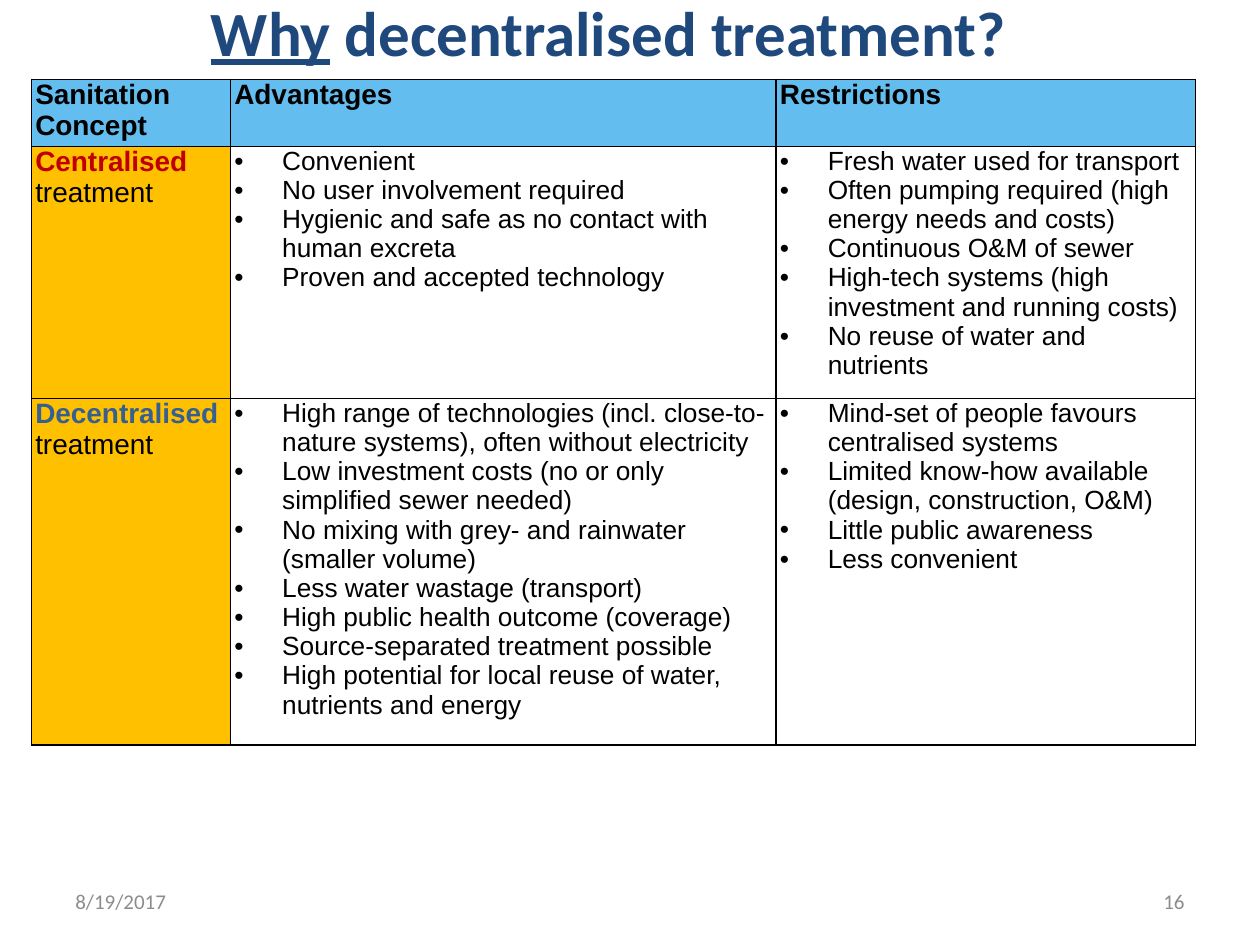
from pptx import Presentation
from pptx.dml.color import RGBColor
from pptx.enum.text import MSO_ANCHOR, PP_ALIGN
from pptx.oxml import parse_xml
from pptx.oxml.ns import nsdecls
from pptx.util import Inches, Pt

NAVY = RGBColor(0x1F, 0x49, 0x7D)
BLUE = RGBColor(0x37, 0x60, 0x92)
RED = RGBColor(0xC0, 0x00, 0x00)
BLACK = RGBColor(0x00, 0x00, 0x00)
GREY = RGBColor(0x8C, 0x8C, 0x8C)
SKY = RGBColor(0x63, 0xBE, 0xEF)
AMBER = RGBColor(0xFF, 0xC0, 0x00)

COLUMN_WIDTHS = (1.58, 4.33, 3.33)
ROW_HEIGHTS = (0.53, 2, 2.75)
BULLET_INDENT = Inches(0.38)

HEADINGS = ("Sanitation Concept", "Advantages", "Restrictions")
CONCEPTS = (
    ("Centralised ", RED,
     ("Convenient",
      "No user involvement required",
      "Hygienic and safe as no contact with human excreta",
      "Proven and accepted technology"),
     ("Fresh water used for transport",
      "Often pumping required (high energy needs and costs)",
      "Continuous O&M of sewer",
      "High-tech systems (high investment and running costs)",
      "No reuse of water and nutrients")),
    ("Decentralised ", BLUE,
     ("High range of technologies (incl. close-to-nature systems), often without electricity",
      "Low investment costs (no or only simplified sewer needed)",
      "No mixing with grey- and rainwater (smaller volume)",
      "Less water wastage (transport)",
      "High public health outcome (coverage)",
      "Source-separated treatment possible",
      "High potential for local reuse of water, nutrients and energy"),
     ("Mind-set of people favours centralised systems",
      "Limited know-how available (design, construction, O&M)",
      "Little public awareness",
      "Less convenient")),
)


def add_run(paragraph, text, font_name, size, color, bold=False):
    run = paragraph.add_run()
    run.text = text
    run.font.name = font_name
    run.font.size = Pt(size)
    run.font.color.rgb = color
    run.font.bold = bold
    return run


def add_title(slide):
    title = slide.shapes.title
    title.left, title.top = Inches(0.33), Inches(-0.17)
    title.width, title.height = Inches(9), Inches(0.83)
    title.text_frame.vertical_anchor = MSO_ANCHOR.MIDDLE
    paragraph = title.text_frame.paragraphs[0]
    paragraph.alignment = PP_ALIGN.CENTER
    add_run(paragraph, "Why", "Calibri", 36, NAVY, True).font.underline = True
    add_run(paragraph, " decentralised treatment?", "Calibri", 36, NAVY, True)


def add_footer(slide, left, text, alignment):
    box = slide.shapes.add_textbox(Inches(left), Inches(6.95), Inches(2.33), Inches(0.4))
    box.text_frame.word_wrap = True
    box.text_frame.vertical_anchor = MSO_ANCHOR.MIDDLE
    paragraph = box.text_frame.paragraphs[0]
    paragraph.alignment = alignment
    add_run(paragraph, text, "Calibri", 12, GREY)


def format_cell(cell, fill_color=None):
    """Set margins, black borders and an optional fill."""
    cell.margin_left = cell.margin_right = Inches(0.03)
    cell.margin_top = cell.margin_bottom = 0
    properties = cell._tc.get_or_add_tcPr()
    for side in ("lnL", "lnR", "lnT", "lnB"):
        properties.append(parse_xml(
            f'<a:{side} {nsdecls("a")} w="{Pt(1)}"><a:solidFill>'
            f'<a:srgbClr val="{BLACK}"/></a:solidFill></a:{side}>'))
    if fill_color is None:
        cell.fill.background()
    else:
        cell.fill.solid()
        cell.fill.fore_color.rgb = fill_color


def fill_label(cell, parts, fill_color):
    """Write (text, color, bold) parts as one justified paragraph."""
    format_cell(cell, fill_color)
    paragraph = cell.text_frame.paragraphs[0]
    paragraph.alignment = PP_ALIGN.JUSTIFY
    for text, color, bold in parts:
        add_run(paragraph, text, "Arial", 16, color, bold)


def fill_bullets(cell, items):
    format_cell(cell)
    text_frame = cell.text_frame
    for index, item in enumerate(items):
        paragraph = text_frame.add_paragraph() if index else text_frame.paragraphs[0]
        properties = paragraph._p.get_or_add_pPr()
        properties.set("marL", str(BULLET_INDENT))
        properties.set("indent", str(-BULLET_INDENT))
        properties.append(parse_xml(f'<a:buFont {nsdecls("a")} typeface="Arial"/>'))
        properties.append(parse_xml(f'<a:buChar {nsdecls("a")} char="•"/>'))
        add_run(paragraph, item, "Arial", 15, BLACK)


def add_comparison_table(slide):
    table = slide.shapes.add_table(
        len(ROW_HEIGHTS), len(COLUMN_WIDTHS), Inches(0.25), Inches(0.63),
        Inches(sum(COLUMN_WIDTHS)), Inches(sum(ROW_HEIGHTS))).table
    table.first_row = table.horz_banding = False
    for column, width in zip(table.columns, COLUMN_WIDTHS):
        column.width = Inches(width)
    for row, height in zip(table.rows, ROW_HEIGHTS):
        row.height = Inches(height)

    for column_index, heading in enumerate(HEADINGS):
        fill_label(table.cell(0, column_index), [(heading, BLACK, True)], SKY)
    for row_index, (name, color, advantages, restrictions) in enumerate(CONCEPTS, start=1):
        fill_label(table.cell(row_index, 0),
                   [(name, color, True), ("treatment", BLACK, False)], AMBER)
        fill_bullets(table.cell(row_index, 1), advantages)
        fill_bullets(table.cell(row_index, 2), restrictions)


def main():
    presentation = Presentation()
    presentation.slide_width = Inches(10)
    presentation.slide_height = Inches(7.5)
    slide = presentation.slides.add_slide(presentation.slide_layouts[5])
    add_title(slide)
    add_footer(slide, 0.5, "8/19/2017", PP_ALIGN.LEFT)
    add_footer(slide, 7.17, "16", PP_ALIGN.RIGHT)
    add_comparison_table(slide)
    presentation.save("out.pptx")


if __name__ == "__main__":
    main()
